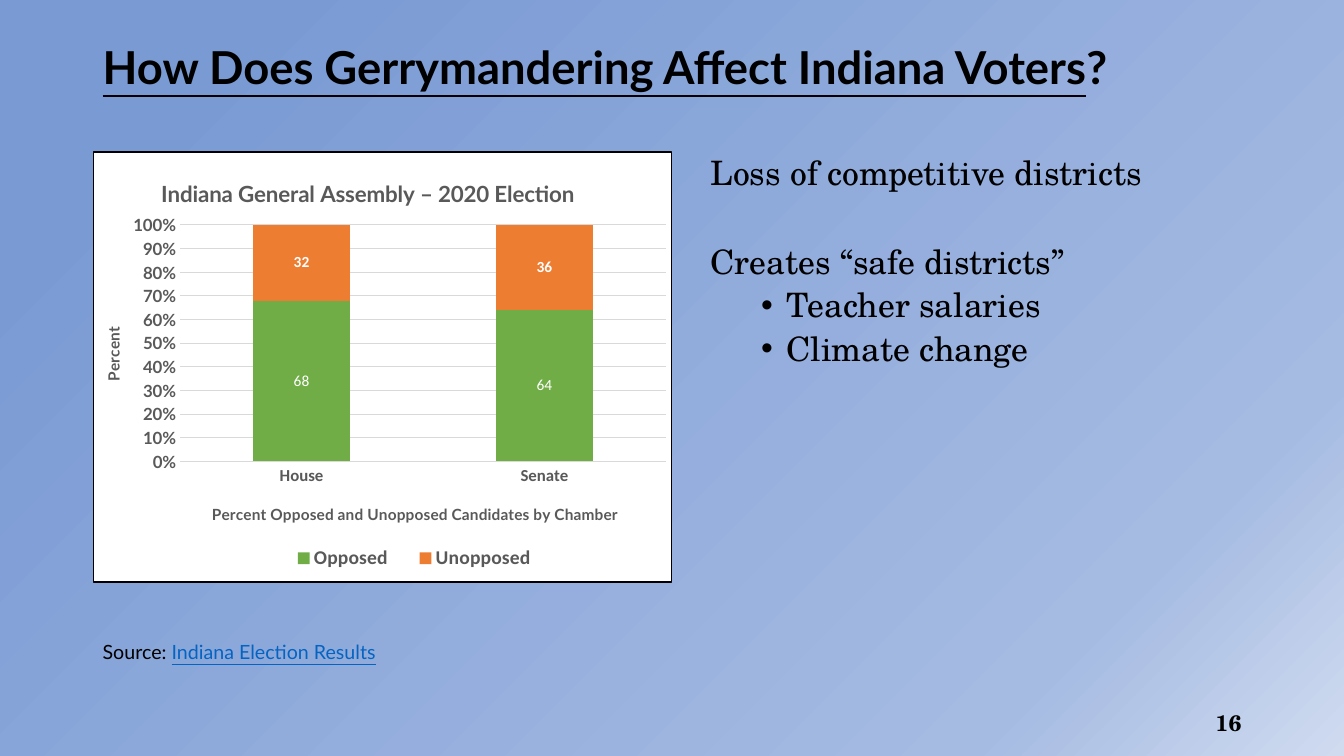
from lxml.etree import SubElement
from pptx import Presentation
from pptx.chart.data import CategoryChartData as Data
from pptx.dml.color import RGBColor
from pptx.enum.chart import XL_CHART_TYPE as Kind, XL_LABEL_POSITION as Spot
from pptx.enum.chart import XL_LEGEND_POSITION as Side, XL_TICK_MARK as Tick
from pptx.enum.text import MSO_ANCHOR as Anchor, PP_ALIGN as Align
from pptx.oxml import parse_xml
from pptx.oxml.ns import nsdecls, qn
from pptx.util import Inches, Pt

BLACK = RGBColor(0, 0, 0)
WHITE = RGBColor(255, 255, 255)
GRAY = RGBColor(0x59, 0x59, 0x59)
PALE = RGBColor(0xD9, 0xD9, 0xD9)
BLUE = RGBColor(0x05, 0x63, 0xC1)
GREEN = RGBColor(0x70, 0xAD, 0x47)
ORANGE = RGBColor(0xED, 0x7D, 0x31)
SKY = [(0, RGBColor(0xD0, 0xDB, 0xF0)), (18, RGBColor(0xA5, 0xBB, 0xE2)),
       (87, RGBColor(0x7A, 0x9A, 0xD4))]
SANS, SERIF, PLAIN = "Lato", "TeX Gyre Schola", "Calibri"
WIDE, HIGH = Inches(13.33), Inches(7.5)


def share(x, y, w, h):
    """Turn percentages of the slide into a box."""
    return [int(part * side / 100)
            for part, side in zip((x, y, w, h), (WIDE, HIGH, WIDE, HIGH))]


def style(font, color=BLACK, **looks):
    """Set the colour and other looks of a font."""
    font.color.rgb = color
    for key, val in looks.items():
        setattr(font, key, val)


def frame(slide, box, anchor=Anchor.TOP):
    """Add a wrapping text box and return its frame."""
    text = slide.shapes.add_textbox(*box).text_frame
    text.word_wrap = True
    text.vertical_anchor = anchor
    return text


def write(para, runs, **form):
    """Fill a paragraph with styled runs."""
    for key, val in form.items():
        setattr(para, key, val)
    for words, looks in runs:
        run = para.add_run()
        run.text = words
        style(run.font, **looks)


def backdrop(slide):
    """Fill the background with a glow from the lower right corner."""
    stops = "".join(f'<a:gs pos="{pos * 1000}"><a:srgbClr val="{tint}"/></a:gs>'
                    for pos, tint in SKY)
    back = parse_xml(
        f'<p:bg {nsdecls("p", "a")}><p:bgPr><a:gradFill rotWithShape="1">'
        f'<a:gsLst>{stops}</a:gsLst><a:path path="circle">'
        '<a:fillToRect l="100000" t="100000"/></a:path></a:gradFill>'
        '<a:effectLst/></p:bgPr></p:bg>')
    slide.element.cSld.insert(0, back)


def heading(slide, box):
    """Write the slide title."""
    look = dict(name=SANS, size=Pt(32.4), bold=True)
    write(frame(slide, box).paragraphs[0],
          [("How Does Gerrymandering Affect Indiana Voters",
            dict(look, underline=True)), ("?", look)], line_spacing=0.9)


def source(slide, box):
    """Write the source line."""
    look = dict(name=SANS, size=Pt(14))
    write(frame(slide, box).paragraphs[0],
          [("Source: ", look),
           ("Indiana Election Results", dict(look, color=BLUE, underline=True))],
          line_spacing=0.9)


def points(slide, box):
    """List the effects on voters."""
    text = frame(slide, box)
    rows = [("Loss of competitive districts", 0, False),
            ("Creates “safe districts”", 38, False),
            ("Teacher salaries", 5, True), ("Climate change", 5, True)]
    for at, (words, gap, dot) in enumerate(rows):
        para = text.add_paragraph() if at else text.paragraphs[0]
        write(para, [(words, dict(name=SERIF, size=Pt(24)))],
              line_spacing=0.9, space_before=Pt(gap))
        if dot:
            props = para._p.get_or_add_pPr()
            props.set("marL", str(Inches(0.75)))
            props.set("indent", str(Inches(-0.25)))
            SubElement(props, qn("a:buFont")).set("typeface", "Arial")
            SubElement(props, qn("a:buChar")).set("char", "•")


def number(slide, box):
    """Write the page number."""
    write(frame(slide, box, Anchor.MIDDLE).paragraphs[0],
          [("16", dict(name=SERIF, size=Pt(16), bold=True))],
          alignment=Align.RIGHT)


def pin(node, at, inner=False, **spots):
    """Fix the place of a chart part as shares of the chart."""
    for old in node.findall(qn("c:layout")):
        node.remove(old)
    area = '<c:layoutTarget val="inner"/>' if inner else ""
    modes = "".join(f'<c:{key}Mode val="edge"/>' for key in "xy")
    sizes = "".join(f'<c:{key} val="{val}"/>' for key, val in spots.items())
    node.insert(at, parse_xml(
        f'<c:layout {nsdecls("c")}><c:manualLayout>{area}{modes}{sizes}'
        '</c:manualLayout></c:layout>'))


def caption(title, words, size, x, y):
    """Write and place a chart or axis title."""
    para = title.text_frame.paragraphs[0]
    write(para, [(words, dict(color=GRAY, name=SANS, size=Pt(size), bold=True))])
    pin(title._element, 1, x=x, y=y)


def graph(slide, box):
    """Chart opposed and unopposed candidates by chamber."""
    data = Data()
    data.categories = ["House", "Senate"]
    data.add_series("Opposed", (68, 64))
    data.add_series("Unopposed", (32, 36))
    chart = slide.shapes.add_chart(Kind.COLUMN_STACKED_100, *box, data).chart
    style(chart.font, name=PLAIN, size=Pt(10))
    root = chart._chartSpace
    root.find(qn("c:chart")).addnext(parse_xml(
        f'<c:spPr {nsdecls("c", "a")}><a:solidFill><a:srgbClr val="{WHITE}"/>'
        f'</a:solidFill><a:ln w="{Pt(1)}"><a:solidFill><a:srgbClr val="{BLACK}"/>'
        '</a:solidFill></a:ln></c:spPr>'))

    chart.has_title = True
    caption(chart.chart_title, "Indiana General Assembly – 2020 Election",
            16, 0.11, 0.05)
    cats, vals = chart.category_axis, chart.value_axis
    caption(cats.axis_title, "Percent Opposed and Unopposed Candidates by Chamber",
            11, 0.2, 0.81)
    caption(vals.axis_title, "Percent", 11, 0.01, 0.4)
    for axis, face in ((cats, PLAIN), (vals, SANS)):
        axis.major_tick_mark = axis.minor_tick_mark = Tick.NONE
        style(axis.tick_labels.font, GRAY, name=face, size=Pt(12), bold=True)
    vals.tick_labels.number_format = "0%"
    vals.tick_labels.number_format_is_linked = False
    vals.maximum_scale, vals.major_unit = 1, 0.1
    vals.format.line.fill.background()
    for line in (cats.format.line, vals.major_gridlines.format.line):
        line.color.rgb, line.width = PALE, Pt(0.75)

    plot = chart.plots[0]
    plot.gap_width, plot.overlap, plot.vary_by_categories = 150, 100, False
    for bars, tint, bold in zip(plot.series, (GREEN, ORANGE), (False, True)):
        bars.format.fill.solid()
        bars.format.fill.fore_color.rgb = tint
        tags = bars.data_labels
        tags.show_value, tags.position = True, Spot.CENTER
        style(tags.font, WHITE, name=PLAIN, size=Pt(11), bold=bold)
    pin(root.find(".//" + qn("c:plotArea")), 0, True, x=0.15, y=0.17, w=0.84, h=0.55)

    chart.has_legend = True
    legend = chart.legend
    legend.position, legend.include_in_layout = Side.BOTTOM, False
    style(legend.font, GRAY, name=PLAIN, size=Pt(14), bold=True)
    pin(legend._element, 1, x=0.31, y=0.9, w=0.49, h=0.09)


def main():
    """Build the slide and save it."""
    deck = Presentation()
    deck.slide_width, deck.slide_height = WIDE, HIGH
    slide = deck.slides.add_slide(deck.slide_layouts[6])
    backdrop(slide)
    number(slide, share(70.6, 92.93, 22.5, 5.33))
    heading(slide, share(6.9, 5.33, 86.27, 15.33))
    source(slide, share(6.9, 84.4, 28, 6.53))
    graph(slide, share(6.9, 20, 43.14, 57.07))
    points(slide, share(52.14, 20, 41.79, 39.07))
    deck.save("out.pptx")


if __name__ == "__main__":
    main()
